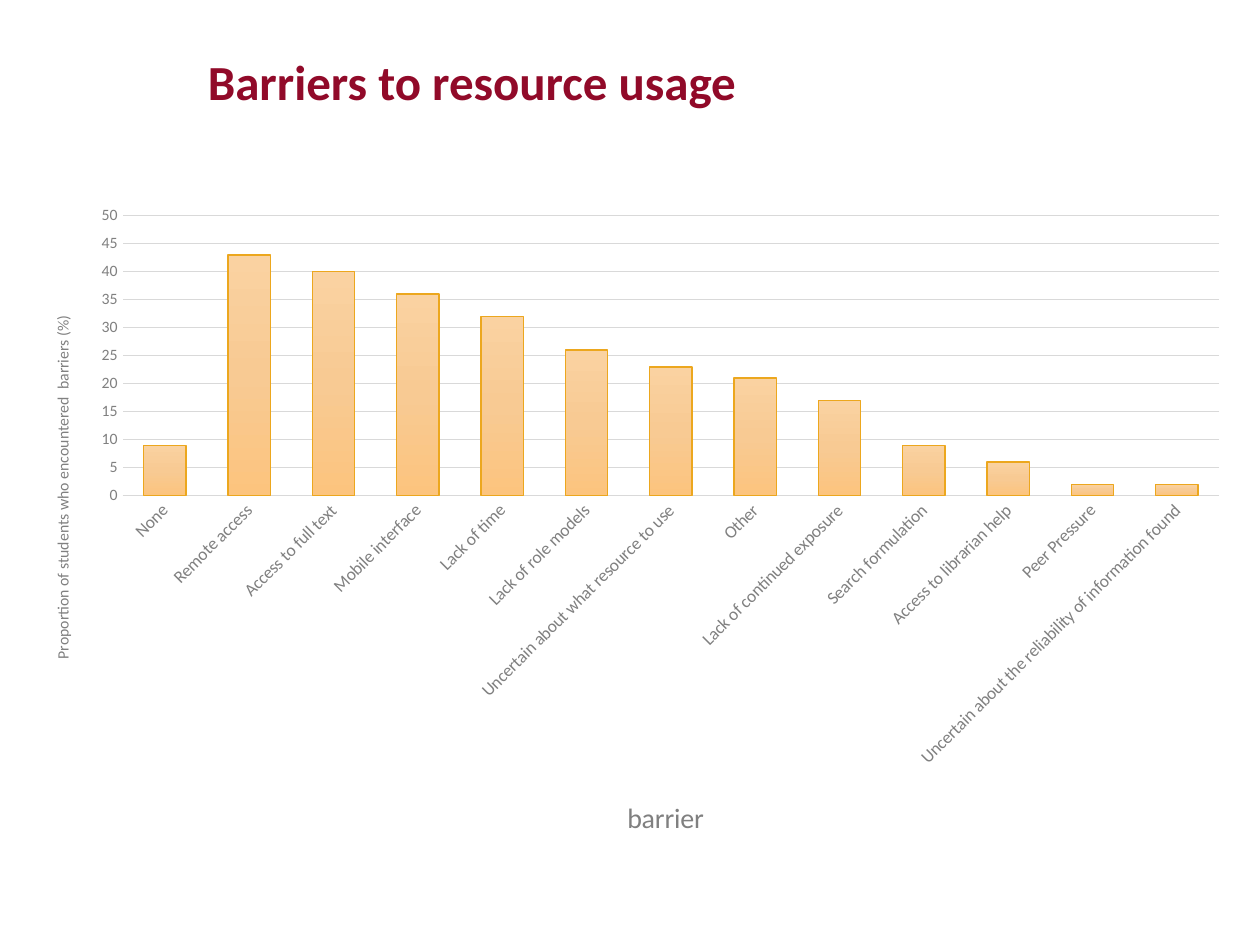
import copy
from dataclasses import dataclass

import pptx
import pptx.chart.data
import pptx.dml.color
import pptx.enum.chart
import pptx.enum.text
import pptx.oxml
import pptx.oxml.ns
import pptx.util

Inches = pptx.util.Inches
Pt = pptx.util.Pt
RGBColor = pptx.dml.color.RGBColor
qn = pptx.oxml.ns.qn

FONT = "Calibri"
CRIMSON = RGBColor(0x91, 0x0A, 0x29)
GRAY = RGBColor(0x80, 0x80, 0x80)
GRID = RGBColor(0xD9, 0xD9, 0xD9)
BAR_LINE = RGBColor(0xEC, 0xA7, 0x1E)
BAR_STOPS = (
    (0, RGBColor(0xFA, 0xD2, 0xA1)),
    (0.5, RGBColor(0xF8, 0xCA, 0x93)),
    (1, RGBColor(0xFC, 0xC4, 0x7E)),
)


@dataclass
class Barrier:
    name: str
    percent: int


@dataclass
class AxisStyle:
    title: str
    title_size: int
    title_x: float
    title_y: float
    title_rotation: int
    label_size: int
    label_rotation: int


BARRIERS = [
    Barrier("None", 9),
    Barrier("Remote access", 43),
    Barrier("Access to full text", 40),
    Barrier("Mobile interface", 36),
    Barrier("Lack of time", 32),
    Barrier("Lack of role models", 26),
    Barrier("Uncertain about what resource to use", 23),
    Barrier("Other", 21),
    Barrier("Lack of continued exposure", 17),
    Barrier("Search formulation", 9),
    Barrier("Access to librarian help", 6),
    Barrier("Peer Pressure", 2),
    Barrier("Uncertain about the reliability of information found", 2),
]
BARRIER_AXIS = AxisStyle("barrier", 16, 0.49, 0.91, 0, 10, -45)
PERCENT_AXIS = AxisStyle(
    "Proportion of students who encountered  barriers (%)",
    9, 0.02, 0.18, -90, 9, 0)


def write(frame, text: str, *, size: float, color: RGBColor,
          bold: bool = False, line_spacing=None, align=None) -> None:
    frame.text = text
    paragraph = frame.paragraphs[0]
    paragraph.alignment = align
    paragraph.line_spacing = line_spacing
    font = paragraph.runs[0].font
    font.name, font.size, font.bold = FONT, Pt(size), bold
    font.color.rgb = color


def manual_layout(**values) -> object:
    """Build a c:layout from chart fractions."""
    items = "".join(f'<c:{key} val="{value}"/>' for key, value in values.items())
    return pptx.oxml.parse_xml(
        f'<c:layout {pptx.oxml.ns.nsdecls("c")}>'
        f"<c:manualLayout>{items}</c:manualLayout></c:layout>")


def replace_layout(parent, layout, after: str = "") -> None:
    for old in parent.findall(qn("c:layout")):
        parent.remove(old)
    if after:
        parent.find(qn(after)).addnext(layout)
    else:
        parent.insert(0, layout)


def rotate(body, degrees: int) -> None:
    body.set("rot", str(degrees * 60000))
    body.set("vert", "horz")


def style_axis(axis, style: AxisStyle) -> None:
    axis.major_tick_mark = axis.minor_tick_mark = pptx.enum.chart.XL_TICK_MARK.NONE
    labels = axis.tick_labels.font
    labels.name, labels.size = FONT, Pt(style.label_size)
    labels.color.rgb = GRAY
    rotate(axis._element.find(qn("c:txPr")).find(qn("a:bodyPr")),
           style.label_rotation)

    title = axis.axis_title
    write(title.text_frame, style.title, size=style.title_size, color=GRAY)
    rotate(title._element.find(".//" + qn("a:bodyPr")), style.title_rotation)
    replace_layout(title._element, manual_layout(
        xMode="edge", yMode="edge", x=style.title_x, y=style.title_y), "c:tx")


def style_line(line, color: RGBColor) -> None:
    line.color.rgb = color
    line.width = Pt(0.75)


def style_bars(plot) -> None:
    plot.gap_width, plot.overlap = 100, -24
    plot.vary_by_categories = False
    bars = plot.series[0]
    style_line(bars.format.line, BAR_LINE)
    fill = bars.format.fill
    fill.gradient()
    fill.gradient_angle = 270
    # The default gradient has two stops; add the middle one
    stops = next(bars._element.iter(qn("a:gsLst")))
    stops.insert(1, copy.deepcopy(stops[0]))
    for stop, (position, color) in zip(fill.gradient_stops, BAR_STOPS):
        stop.position = position
        stop.color.rgb = color


def add_barrier_chart(slide) -> None:
    data = pptx.chart.data.CategoryChartData()
    data.categories = [barrier.name for barrier in BARRIERS]
    data.add_series("Series 1", [barrier.percent for barrier in BARRIERS])
    chart = slide.shapes.add_chart(
        pptx.enum.chart.XL_CHART_TYPE.COLUMN_CLUSTERED,
        Inches(0.2), Inches(1.54), Inches(9.67), Inches(5.23), data).chart
    chart.has_legend = chart.has_title = False
    chart.font.name, chart.font.size = FONT, Pt(10)
    style_bars(chart.plots[0])

    # Axes and gridlines
    style_axis(chart.category_axis, BARRIER_AXIS)
    style_line(chart.category_axis.format.line, GRID)
    percent = chart.value_axis
    style_axis(percent, PERCENT_AXIS)
    percent.minimum_scale, percent.maximum_scale, percent.major_unit = 0, 50, 5
    percent.format.line.fill.background()
    style_line(percent.major_gridlines.format.line, GRID)

    # Room for the slanted labels below the bars
    plot_area = next(chart._chartSpace.iter(qn("c:plotArea")))
    replace_layout(plot_area, manual_layout(
        layoutTarget="inner", xMode="edge", yMode="edge",
        x=0.08, y=0.033, w=0.9, h=0.425))


def main() -> None:
    deck = pptx.Presentation()
    deck.slide_width, deck.slide_height = Inches(10), Inches(7.5)
    slide = deck.slides.add_slide(deck.slide_layouts[5])

    # Title
    heading = slide.shapes.title
    heading.left, heading.top = Inches(1.65), Inches(0.17)
    heading.width, heading.height = Inches(6.7), Inches(1.03)
    frame = heading.text_frame
    frame.margin_left = frame.margin_bottom = 0
    frame.margin_top, frame.margin_right = Inches(0.05), Inches(0.1)
    frame.vertical_anchor = pptx.enum.text.MSO_ANCHOR.MIDDLE
    write(frame, "Barriers to resource usage", size=28, color=CRIMSON, bold=True,
          line_spacing=Pt(24), align=pptx.enum.text.PP_ALIGN.LEFT)

    add_barrier_chart(slide)
    deck.save("out.pptx")


if __name__ == "__main__":
    main()
